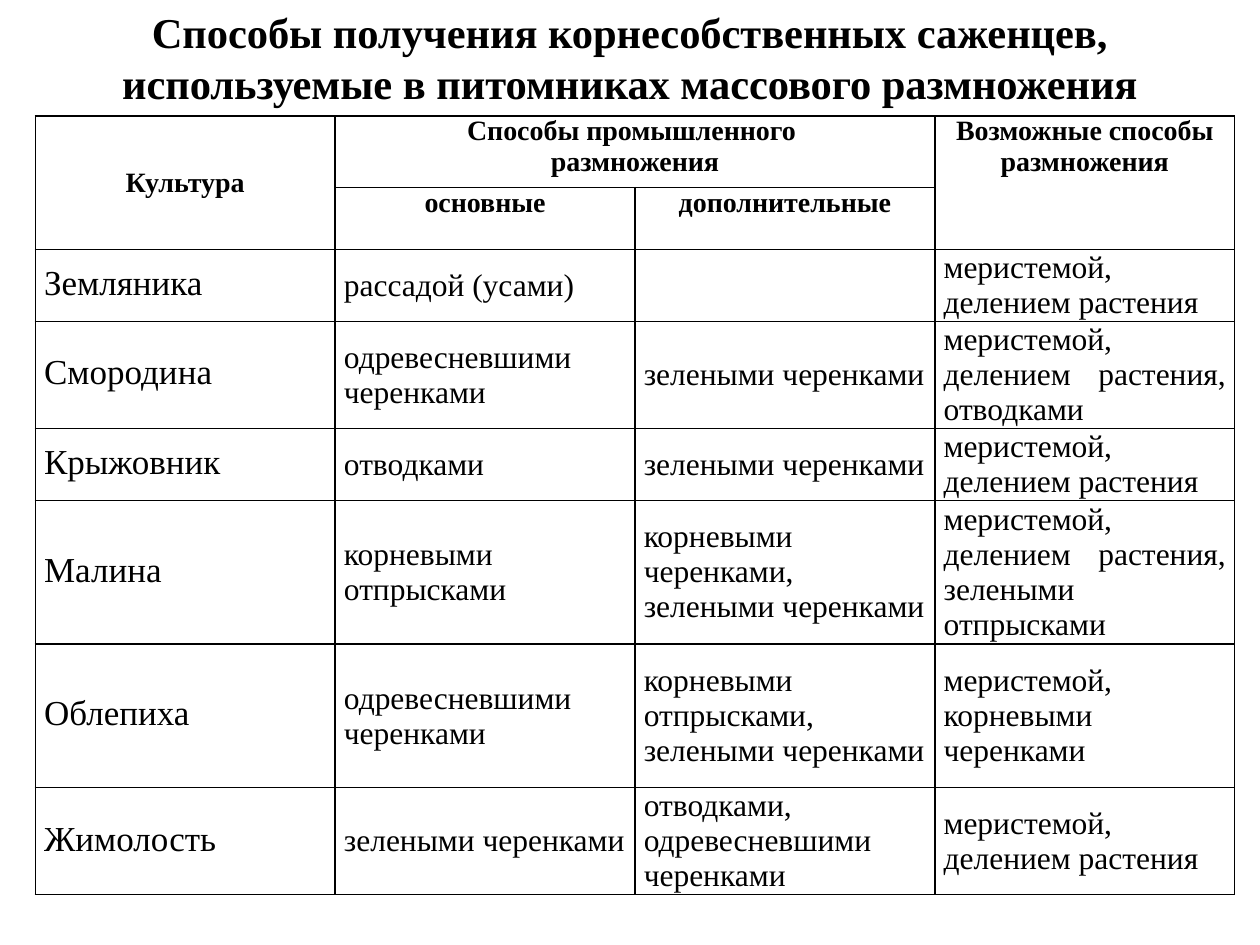
from dataclasses import dataclass

from lxml.etree import SubElement
from pptx import Presentation
from pptx.dml.color import RGBColor
from pptx.enum.text import MSO_ANCHOR as Anchor, PP_ALIGN as Align
from pptx.oxml.ns import qn
from pptx.util import Inches, Pt


@dataclass(frozen=True)
class Theme:
    font: str = "Times New Roman"
    ink: str = "000000"
    title_size: float = 24.3
    title_pitch: float = 29
    header_size: float = 16
    header_pitch: float = 17.7
    crop_size: float = 20
    method_size: float = 18
    body_pitch: float = 20
    border_width: float = 1


THEME = Theme()

TITLE = (
    "Способы получения корнесобственных саженцев,\n"
    "используемые в питомниках массового размножения"
)
COLUMN_WIDTH = 2.38
ROW_HEIGHTS = [0.57, 0.49, 0.57, 0.85, 0.57, 1.14, 1.14, 0.85]

# row, column, text, rows spanned, columns spanned, anchor
HEADERS = [
    (0, 0, "Культура", 2, 1, Anchor.MIDDLE),
    (0, 1, "Способы промышленного \nразмножения", 1, 2, Anchor.TOP),
    (0, 3, "Возможные способы размножения", 2, 1, Anchor.TOP),
    (1, 1, "основные", 1, 1, Anchor.TOP),
    (1, 2, "дополнительные", 1, 1, Anchor.TOP),
]
CROPS = [
    ("Земляника", "рассадой (усами)", "", "меристемой, делением растения"),
    ("Смородина", "одревесневшими черенками", "зелеными черенками",
     "меристемой, делением растения, отводками"),
    ("Крыжовник", "отводками", "зелеными черенками", "меристемой, делением растения"),
    ("Малина", "корневыми отпрысками", "корневыми черенками, зелеными черенками",
     "меристемой, делением растения, зелеными отпрысками"),
    ("Облепиха", "одревесневшими черенками", "корневыми отпрысками, зелеными черенками",
     "меристемой, корневыми черенками"),
    ("Жимолость", "зелеными черенками", "отводками, одревесневшими черенками",
     "меристемой, делением растения"),
]


def write_text(frame, text, *, size, pitch, bold=False, align=Align.CENTER):
    """Fill a text frame, one paragraph for each line of text."""
    frame.word_wrap = True
    for index, line in enumerate(text.split("\n")):
        paragraph = frame.paragraphs[0] if index == 0 else frame.add_paragraph()
        paragraph.alignment = align
        paragraph.line_spacing = Pt(pitch)
        run = paragraph.add_run()
        run.text = line
        run.font.name = THEME.font
        run.font.size = Pt(size)
        run.font.bold = bold
        run.font.color.rgb = RGBColor.from_string(THEME.ink)


def add_title(slide):
    box = slide.shapes.add_textbox(Inches(0.12), 0, Inches(9.76), Inches(0.99))
    frame = box.text_frame
    frame.margin_top = Inches(0.05)
    frame.vertical_anchor = Anchor.TOP
    write_text(frame, TITLE, size=THEME.title_size, pitch=THEME.title_pitch, bold=True)


def format_cell(cell):
    """Set the insets, the four borders and an empty fill."""
    cell.margin_left = cell.margin_right = Inches(0.07)
    cell.margin_top = cell.margin_bottom = 0
    properties = cell._tc.get_or_add_tcPr()
    for side in ("a:lnL", "a:lnR", "a:lnT", "a:lnB"):
        line = SubElement(properties, qn(side), w=str(Pt(THEME.border_width)))
        fill = SubElement(line, qn("a:solidFill"))
        SubElement(fill, qn("a:srgbClr"), val=THEME.ink)
    cell.fill.background()


def add_methods_table(slide):
    columns = len(CROPS[0])
    table = slide.shapes.add_table(
        len(ROW_HEIGHTS), columns, Inches(0.28), Inches(0.92),
        Inches(COLUMN_WIDTH * columns), Inches(sum(ROW_HEIGHTS)),
    ).table
    table.first_row = table.horz_banding = False
    for column in table.columns:
        column.width = Inches(COLUMN_WIDTH)
    for row, height in zip(table.rows, ROW_HEIGHTS):
        row.height = Inches(height)
    for cell in table.iter_cells():
        format_cell(cell)

    for row, column, text, row_span, column_span, anchor in HEADERS:
        cell = table.cell(row, column)
        if row_span * column_span > 1:
            cell.merge(table.cell(row + row_span - 1, column + column_span - 1))
        cell.vertical_anchor = anchor
        write_text(cell.text_frame, text, size=THEME.header_size,
                   pitch=THEME.header_pitch, bold=True)

    for row, crop in enumerate(CROPS, start=2):
        for column, text in enumerate(crop):
            if not text:
                continue
            cell = table.cell(row, column)
            cell.vertical_anchor = Anchor.MIDDLE
            size = THEME.method_size if column else THEME.crop_size
            write_text(cell.text_frame, text, size=size,
                       pitch=THEME.body_pitch, align=Align.JUSTIFY)


def main():
    presentation = Presentation()
    presentation.slide_width = Inches(10)
    presentation.slide_height = Inches(7.5)
    slide = presentation.slides.add_slide(presentation.slide_layouts[6])
    add_title(slide)
    add_methods_table(slide)
    presentation.save("out.pptx")


if __name__ == "__main__":
    main()
